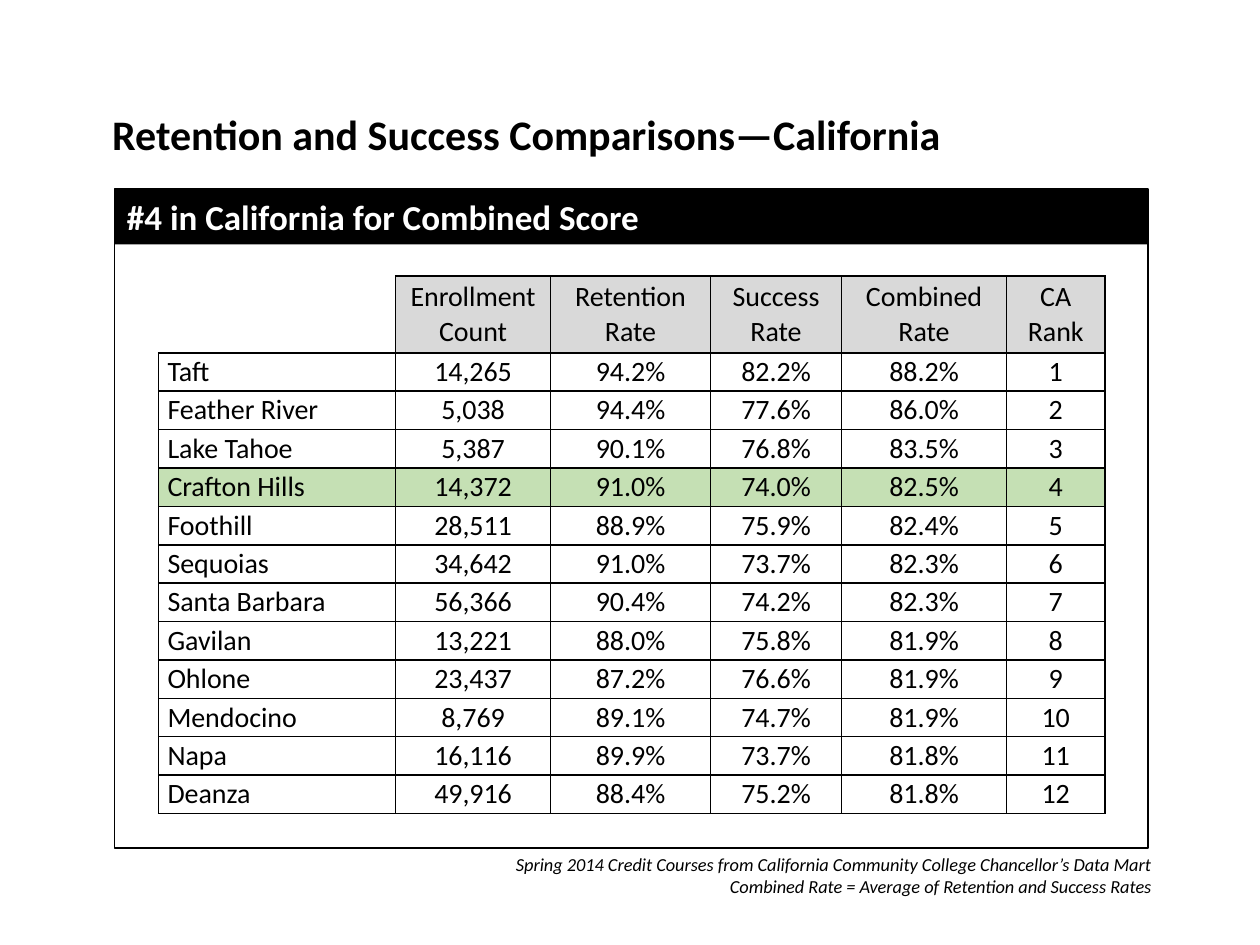
from lxml.etree import SubElement as Sub
from pptx import Presentation
from pptx.dml.color import RGBColor as RGB
from pptx.enum.shapes import MSO_SHAPE as Shape
from pptx.enum.text import MSO_ANCHOR as Anchor, PP_ALIGN as Align
from pptx.oxml.ns import qn
from pptx.util import Inches, Pt

BLACK = RGB(0x00, 0x00, 0x00)
WHITE = RGB(0xFF, 0xFF, 0xFF)
GRAY = RGB(0xD9, 0xD9, 0xD9)
GREEN = RGB(0xC5, 0xE0, 0xB4)

HEADS = ["", "Enrollment\nCount", "Retention\nRate", "Success\nRate",
         "Combined\nRate", "CA\nRank"]
SCORES = [
    ("Taft", "14,265", "94.2%", "82.2%", "88.2%"),
    ("Feather River", "5,038", "94.4%", "77.6%", "86.0%"),
    ("Lake Tahoe", "5,387", "90.1%", "76.8%", "83.5%"),
    ("Crafton Hills", "14,372", "91.0%", "74.0%", "82.5%"),
    ("Foothill", "28,511", "88.9%", "75.9%", "82.4%"),
    ("Sequoias", "34,642", "91.0%", "73.7%", "82.3%"),
    ("Santa Barbara", "56,366", "90.4%", "74.2%", "82.3%"),
    ("Gavilan", "13,221", "88.0%", "75.8%", "81.9%"),
    ("Ohlone", "23,437", "87.2%", "76.6%", "81.9%"),
    ("Mendocino", "8,769", "89.1%", "74.7%", "81.9%"),
    ("Napa", "16,116", "89.9%", "73.7%", "81.8%"),
    ("Deanza", "49,916", "88.4%", "75.2%", "81.8%"),
]
OURS = "Crafton Hills"


class Page:
    font = "Calibri"
    unit = Inches(0.1)

    def __init__(self, deck):
        self.slide = deck.slides.add_slide(deck.slide_layouts[5])
        self.shapes = self.slide.shapes

    def grid(self, *cells):
        return [round(n * self.unit) for n in cells]

    def words(self, frame, text, size, color=BLACK, align=Align.LEFT,
              bold=False, italic=False):
        for i, line in enumerate(text.split("\n")):
            para = frame.add_paragraph() if i else frame.paragraphs[0]
            para.alignment = align
            run = para.add_run()
            run.text = line
            font = run.font
            font.name, font.size = self.font, Pt(size)
            font.bold, font.italic = bold, italic
            font.color.rgb = color

    def title(self, box, text):
        item = self.shapes.title
        item.left, item.top, item.width, item.height = self.grid(*box)
        item.text_frame.vertical_anchor = Anchor.TOP
        self.words(item.text_frame, text, 24, bold=True)

    def rect(self, box, fill=None, line=None):
        item = self.shapes.add_shape(Shape.RECTANGLE, *self.grid(*box))
        item.shadow.inherit = False
        self.paint(item.fill, fill)
        self.paint(item.line.fill, line)
        if line is not None:
            item.line.width = Pt(1)
        return item

    def paint(self, fill, color):
        if color is None:
            fill.background()
        else:
            fill.solid()
            fill.fore_color.rgb = color

    def band(self, box, text):
        frame = self.rect(box, fill=BLACK).text_frame
        frame.vertical_anchor = Anchor.TOP
        self.words(frame, text, 20, WHITE, bold=True)

    def note(self, box, text):
        frame = self.shapes.add_textbox(*self.grid(*box)).text_frame
        frame.word_wrap = True
        self.words(frame, text, 10.5, align=Align.RIGHT, italic=True)

    def edge(self, cell, sides):
        props = cell._tc.get_or_add_tcPr()
        for i, side in enumerate("LRTB"):
            line = props.makeelement(qn(f"a:ln{side}"), {"w": str(Pt(1))})
            props.insert(i, line)
            if side in sides:
                fill = Sub(line, qn("a:solidFill"))
                Sub(fill, qn("a:srgbClr"), val=str(BLACK))
            else:
                Sub(line, qn("a:noFill"))

    def table(self, spot, cols, rows, data):
        box = (*spot, sum(cols), sum(rows))
        table = self.shapes.add_table(len(rows), len(cols), *self.grid(*box)).table
        table.first_row = table.horz_banding = False
        for col, wide in zip(table.columns, self.grid(*cols)):
            col.width = wide
        for row, high in zip(table.rows, self.grid(*rows)):
            row.height = high
        for r, texts in enumerate(data):
            shade = GRAY if r == 0 else GREEN if texts[0] == OURS else None
            for c, text in enumerate(texts):
                cell = table.cell(r, c)
                cell.vertical_anchor = Anchor.MIDDLE
                cell.margin_left = cell.margin_right = Inches(0.07)
                cell.margin_top = cell.margin_bottom = 0
                self.paint(cell.fill, shade if text else None)
                self.edge(cell, "LRTB" if text else "RB")
                if text:
                    align = Align.CENTER if c else Align.LEFT
                    self.words(cell.text_frame, text, 16, align=align)


def main():
    deck = Presentation()
    deck.slide_width, deck.slide_height = Inches(10), Inches(7.5)
    page = Page(deck)
    left, top, wide = 9.1, 15, 82
    page.band((left, top, wide, 4.4), "#4 in California for Combined Score")
    page.rect((left, top, wide, 52.3), line=BLACK)
    page.title((7.9, 8.1, 74.3, 5), "Retention and Success Comparisons—California")
    ranked = [(*row, str(n)) for n, row in enumerate(SCORES, 1)]
    page.table((12.6, 21.9), [18.8, 12.3, 12.7, 10.4, 13.1, 7.8],
               [6.1] + [3.05] * len(SCORES), [HEADS, *ranked])
    page.note((27, 67.2, 65.4, 4.5),
              "Spring 2014 Credit Courses from California Community College "
              "Chancellor’s Data Mart\n"
              "Combined Rate = Average of Retention and Success Rates")
    deck.save("out.pptx")


if __name__ == "__main__":
    main()
